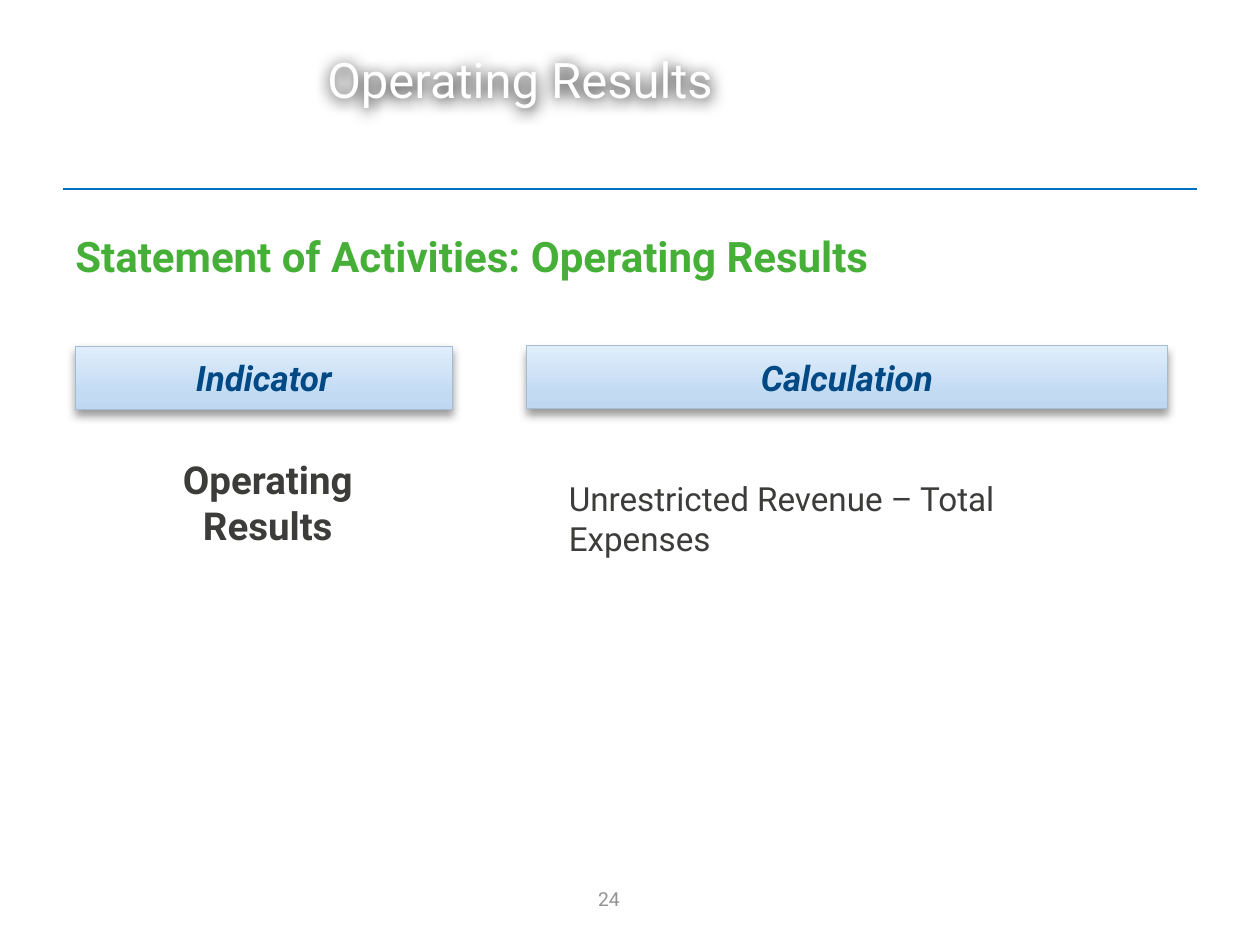
from copy import deepcopy

from lxml.etree import SubElement
from pptx import Presentation
from pptx.dml.color import RGBColor
from pptx.enum.shapes import MSO_CONNECTOR, MSO_SHAPE
from pptx.enum.text import MSO_ANCHOR, PP_ALIGN
from pptx.oxml.ns import qn
from pptx.util import Pt


def color(hex_value):
    return RGBColor.from_string(hex_value)


class SlideBuilder:
    font_name = "Roboto"
    header_gradient = [(0, "BFD7F0"), (0.25, "C2DBF3"), (1, "E0EEFC")]

    def __init__(self, presentation):
        self.slide = presentation.slides.add_slide(presentation.slide_layouts[6])

    def line(self, left, top, right, hex_value, width):
        connector = self.slide.shapes.add_connector(
            MSO_CONNECTOR.STRAIGHT, Pt(left), Pt(top), Pt(right), Pt(top))
        connector.line.color.rgb = color(hex_value)
        connector.line.width = Pt(width)
        SubElement(connector._element.spPr, qn("a:effectLst"))

    def text(self, box, words, size, hex_value, bold=False, italic=False,
             align=PP_ALIGN.LEFT, anchor=MSO_ANCHOR.TOP):
        shape = self.slide.shapes.add_textbox(*map(Pt, box))
        frame = shape.text_frame
        frame.word_wrap = True
        frame.vertical_anchor = anchor
        paragraph = frame.paragraphs[0]
        paragraph.text = words
        paragraph.alignment = align
        font = paragraph.font
        font.name, font.size = self.font_name, Pt(size)
        font.bold, font.italic = bold, italic
        font.color.rgb = color(hex_value)
        return shape

    def shadow(self, shape, opacity, blur, distance):
        """Cast a black shadow straight down."""
        shape.shadow.inherit = False
        effects = shape._element.spPr.find(qn("a:effectLst"))
        outer = SubElement(effects, qn("a:outerShdw"), blurRad=str(Pt(blur)),
                           dist=str(Pt(distance)), dir="5400000", rotWithShape="0")
        black = SubElement(outer, qn("a:srgbClr"), val="000000")
        SubElement(black, qn("a:alpha"), val=str(opacity * 1000))

    def header(self, left, top, width, words):
        """Draw a gradient bar with a centred column heading over it."""
        bar = self.slide.shapes.add_shape(
            MSO_SHAPE.RECTANGLE, Pt(left), Pt(top), Pt(width), Pt(36))
        bar.fill.gradient()
        bar.fill.gradient_angle = 90
        stop_list = bar._element.spPr.find(".//" + qn("a:gsLst"))
        stop_list.insert(1, deepcopy(stop_list[0]))
        for stop, (position, hex_value) in zip(bar.fill.gradient_stops, self.header_gradient):
            stop.position = position
            stop.color.rgb = color(hex_value)
        bar.line.color.rgb = color("A4BDD5")
        bar.line.width = Pt(0.75)
        self.shadow(bar, 40, 5.2, 3)
        self.text((left, 200, width, 32), words, 20, "004985",
                  bold=True, italic=True, align=PP_ALIGN.CENTER)


def main():
    presentation = Presentation()
    presentation.slide_width, presentation.slide_height = Pt(720), Pt(540)
    builder = SlideBuilder(presentation)

    builder.line(36, 108, 684, "0070C0", 1.5)
    builder.text((264, 499, 168, 29), "24", 11, "929292",
                 align=PP_ALIGN.CENTER, anchor=MSO_ANCHOR.MIDDLE)
    builder.text((36, 114, 648, 50), "Statement of Activities: Operating Results",
                 24, "46AF37", bold=True, anchor=MSO_ANCHOR.BOTTOM)
    title = builder.text((180, 11, 504, 68), "Operating Results", 28, "FFFFFF",
                         anchor=MSO_ANCHOR.MIDDLE)
    builder.shadow(title, 100, 8.5, 1)

    builder.header(301, 197.5, 366, "Calculation")
    builder.header(43, 198, 215.5, "Indicator")
    builder.text((72, 257, 162, 60.5), "Operating Results", 22, "3C3C3B",
                 bold=True, align=PP_ALIGN.CENTER)
    builder.text((318, 270, 330, 30), "Unrestricted Revenue – Total Expenses",
                 19, "3C3C3B")

    presentation.save("out.pptx")


if __name__ == "__main__":
    main()
